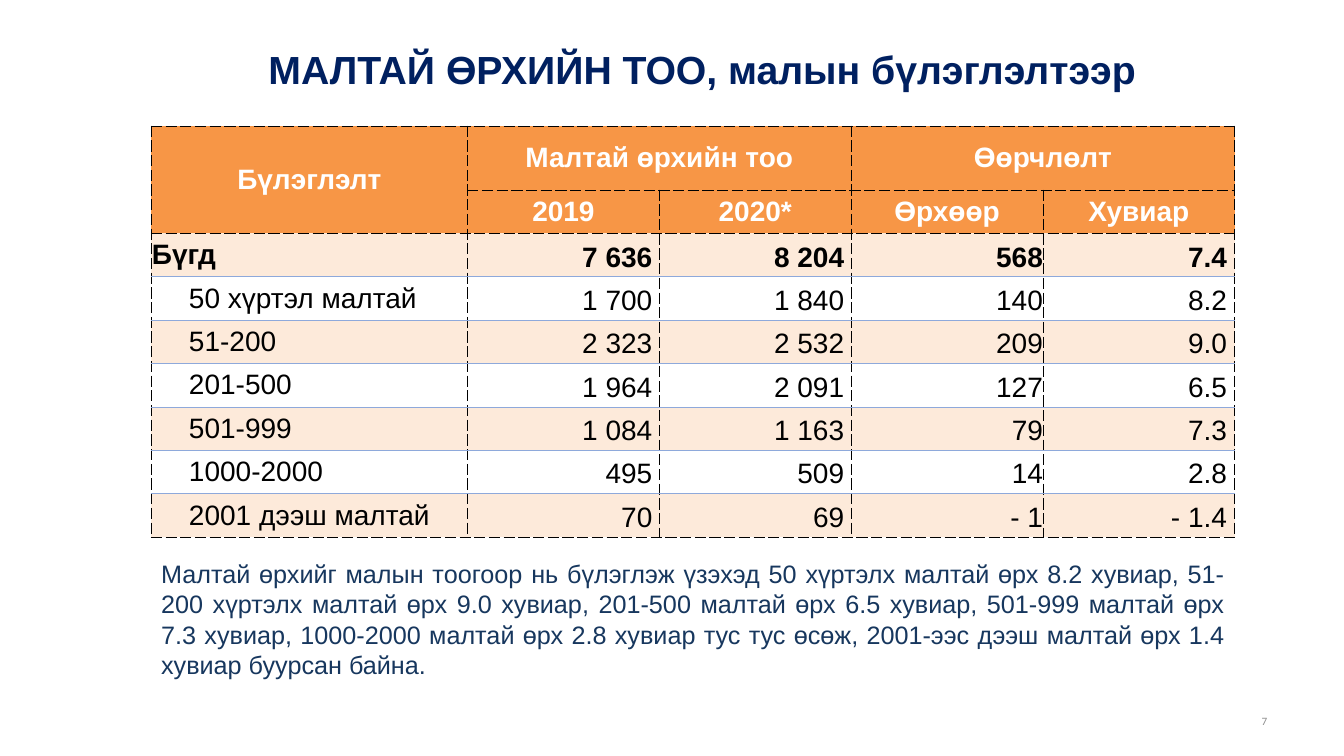
from dataclasses import dataclass

from pptx import Presentation
from pptx.dml.color import RGBColor
from pptx.enum.text import MSO_ANCHOR as Anchor, PP_ALIGN as Align
from pptx.oxml import parse_xml
from pptx.oxml.ns import nsdecls
from pptx.util import Pt


@dataclass(frozen=True)
class Theme:
    font: str = "Arial"
    number_font: str = "Calibri"
    title: str = "002060"
    body: str = "17375E"
    muted: str = "8C8C8C"
    header: str = "F79646"
    band: str = "FDEADA"
    white: str = "FFFFFF"
    black: str = "000000"
    rule: str = "8EA9DB"
    title_size: int = 28
    table_size: int = 20
    body_size: int = 18
    number_size: int = 8


THEME = Theme()

TITLE = "МАЛТАЙ ӨРХИЙН ТОО, малын бүлэглэлтээр"
SUMMARY = (
    "Малтай өрхийг малын тоогоор нь бүлэглэж үзэхэд 50 хүртэлх малтай өрх 8.2 хувиар, "
    "51-200 хүртэлх малтай өрх 9.0 хувиар, 201-500 малтай өрх 6.5 хувиар, "
    "501-999 малтай өрх 7.3 хувиар, 1000-2000 малтай өрх 2.8 хувиар тус тус өсөж, "
    "2001-ээс дээш малтай өрх 1.4 хувиар буурсан байна."
)
HEADER_ROWS = 2
ROWS = [
    ["Бүлэглэлт", "Малтай өрхийн тоо", "", "Өөрчлөлт", ""],
    ["", "2019", "2020*", "Өрхөөр", "Хувиар"],
    ["Бүгд", "7 636", "8 204", "568", "7.4"],
    ["50 хүртэл малтай", "1 700", "1 840", "140", "8.2"],
    ["51-200", "2 323", "2 532", "209", "9.0"],
    ["201-500", "1 964", "2 091", "127", "6.5"],
    ["501-999", "1 084", "1 163", "79", "7.3"],
    ["1000-2000", "495", "509", "14", "2.8"],
    ["2001 дээш малтай", "70", "69", "- 1", "- 1.4"],
]
MERGES = [((0, 0), (1, 0)), ((0, 1), (0, 2)), ((0, 3), (0, 4))]
LABEL_INDENT = 27
VALUE_INSETS = [0, 5, 5, 0, 5.5]  # right inset of each column


def style_paragraph(paragraph, size, color, align, bold=False, font=THEME.font):
    paragraph.alignment = align
    paragraph.font.name = font
    paragraph.font.size = Pt(size)
    paragraph.font.bold = bold
    paragraph.font.color.rgb = RGBColor.from_string(color)


def add_text(slide, box, text, size, color, align, **style):
    shape = slide.shapes.add_textbox(*(Pt(length) for length in box))
    frame = shape.text_frame
    frame.word_wrap = True
    frame.text = text
    style_paragraph(frame.paragraphs[0], size, color, align, **style)
    return frame


def add_title(slide, box):
    frame = add_text(slide, box, TITLE, THEME.title_size, THEME.title, Align.CENTER, bold=True)
    frame.margin_left = Pt(92)


def add_page_number(slide, box):
    frame = add_text(slide, box, "7", THEME.number_size, THEME.muted, Align.RIGHT,
                     font=THEME.number_font)
    frame.vertical_anchor = Anchor.MIDDLE


def set_borders(cell, dashed_top, dashed_bottom):
    sides = {"lnL": True, "lnR": True, "lnT": dashed_top, "lnB": dashed_bottom}
    properties = cell._tc.get_or_add_tcPr()
    for position, (side, dashed) in enumerate(sides.items()):
        color, dash = (THEME.black, "dash") if dashed else (THEME.rule, "solid")
        properties.insert(position, parse_xml(
            f'<a:{side} {nsdecls("a")} w="{Pt(0.5)}"><a:solidFill><a:srgbClr val="{color}"/>'
            f'</a:solidFill><a:prstDash val="{dash}"/></a:{side}>'))


def style_cell(cell, row, column):
    is_header = row < HEADER_ROWS
    is_total = row == HEADER_ROWS
    is_label = column == 0
    cell.vertical_anchor = Anchor.MIDDLE
    cell.margin_top = cell.margin_bottom = 0
    cell.margin_left = Pt(LABEL_INDENT if is_label and row > HEADER_ROWS else 0.5)
    cell.margin_right = Pt(0.5 if is_header else VALUE_INSETS[column])

    # Text
    paragraph = cell.text_frame.paragraphs[0]
    if is_header:
        align = Align.CENTER
    else:
        align = Align.LEFT if is_label else Align.RIGHT
        paragraph.line_spacing = 1.0 if is_label else 1.15
    style_paragraph(paragraph, THEME.table_size, THEME.white if is_header else THEME.black,
                    align, bold=is_header or is_total)

    # Fill and borders
    if is_header or row % 2 == 0:
        cell.fill.solid()
        cell.fill.fore_color.rgb = RGBColor.from_string(THEME.header if is_header else THEME.band)
    else:
        cell.fill.background()
    set_borders(cell, row <= HEADER_ROWS, is_header or row == len(ROWS) - 1)


def add_household_table(slide, box):
    left, top, width, height = box
    value_width, first_height = 137, 45.7
    frame = slide.shapes.add_table(len(ROWS), len(ROWS[0]), *(Pt(length) for length in box))
    table = frame.table
    table.first_row = table.horz_banding = False
    for index, column in enumerate(table.columns):
        column.width = Pt(value_width if index else width - 4 * value_width)
    for index, row in enumerate(table.rows):
        row.height = Pt((height - first_height) / (len(ROWS) - 1) if index else first_height)
    for row, texts in enumerate(ROWS):
        for column, text in enumerate(texts):
            cell = table.cell(row, column)
            cell.text = text
            style_cell(cell, row, column)
    for start, end in MERGES:
        table.cell(*start).merge(table.cell(*end))


def main():
    presentation = Presentation()
    presentation.slide_width, presentation.slide_height = Pt(960), Pt(540)
    slide = presentation.slides.add_slide(presentation.slide_layouts[6])
    add_page_number(slide, (688.3, 500.4, 224, 28.8))
    add_title(slide, (90, 28.8, 738, 41))
    add_text(slide, (108, 395.3, 774, 94.3), SUMMARY, THEME.body_size, THEME.body, Align.JUSTIFY)
    add_household_table(slide, (108, 90, 774, 293.7))
    presentation.save("out.pptx")


if __name__ == "__main__":
    main()
